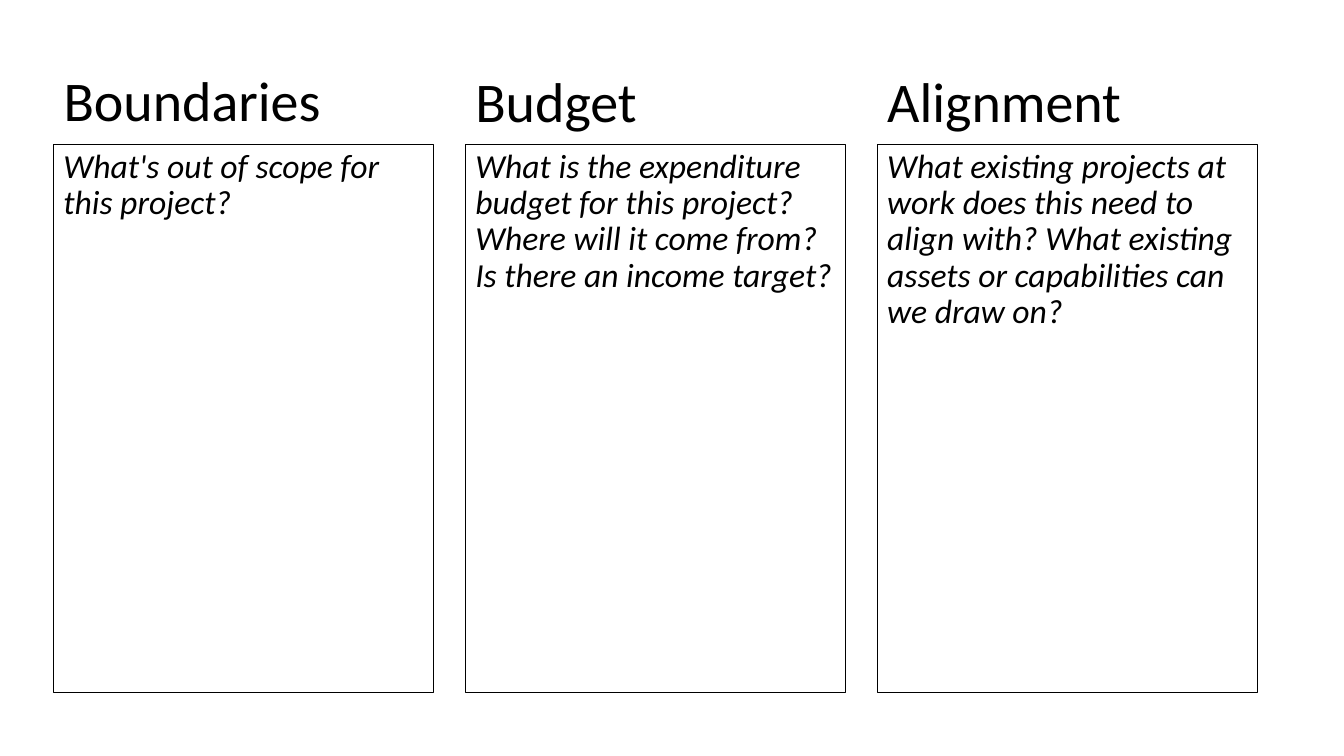
from collections import namedtuple
from dataclasses import dataclass

from pptx import Presentation
from pptx.dml.color import RGBColor
from pptx.enum.shapes import MSO_SHAPE
from pptx.enum.text import MSO_ANCHOR, MSO_AUTO_SIZE, PP_ALIGN
from pptx.util import Pt

Box = namedtuple("Box", "left top width height")


@dataclass(frozen=True)
class Theme:
    font: str = "Calibri"
    ink: RGBColor = RGBColor(0, 0, 0)
    heading_size: float = 40
    prompt_size: float = 24
    border: float = 0.75


THEME = Theme()
COLUMNS_BOX = Box(38.2, 43.4, 859.9, 451.3)
GAP = 22.8
HEADING_HEIGHT = 56
HEADING_GAP = 3.6
COLUMNS = [
    ("Boundaries", "What's out of scope for this project?"),
    ("Budget", "What is the expenditure budget for this project? "
               "Where will it come from? Is there an income target?"),
    ("Alignment", "What existing projects at work does this need to align with? "
                  "What existing assets or capabilities can we draw on?"),
]


def apply_format(target, values):
    for name, value in values.items():
        setattr(target, name, value)


def write_text(shape, text, size, anchor, italic=False, space_before=0):
    frame = shape.text_frame
    apply_format(frame, {
        "word_wrap": True, "auto_size": MSO_AUTO_SIZE.NONE, "vertical_anchor": anchor,
        "margin_left": Pt(7.2), "margin_right": Pt(7.2),
        "margin_top": Pt(3.6), "margin_bottom": Pt(3.6),
    })
    para = frame.paragraphs[0]
    apply_format(para, {"alignment": PP_ALIGN.LEFT, "line_spacing": 0.9,
                        "space_before": Pt(space_before)})
    span = para.add_run()
    span.text = text
    apply_format(span.font, {"name": THEME.font, "size": Pt(size), "italic": italic})
    span.font.color.rgb = THEME.ink


def add_heading(page, box, text, is_title):
    if is_title:
        heading = page.shapes.title
        apply_format(heading, {name: Pt(value) for name, value in box._asdict().items()})
    else:
        heading = page.shapes.add_textbox(*map(Pt, box))
    write_text(heading, text, THEME.heading_size, MSO_ANCHOR.BOTTOM)


def add_prompt(page, box, text):
    panel = page.shapes.add_shape(MSO_SHAPE.RECTANGLE, *map(Pt, box))
    panel.shadow.inherit = False
    panel.fill.background()
    panel.line.color.rgb = THEME.ink
    panel.line.width = Pt(THEME.border)
    write_text(panel, text, THEME.prompt_size, MSO_ANCHOR.TOP, italic=True, space_before=10)


def add_column(page, box, heading, prompt, is_title):
    offset = HEADING_HEIGHT + HEADING_GAP
    add_heading(page, box._replace(height=HEADING_HEIGHT), heading, is_title)
    add_prompt(page, box._replace(top=box.top + offset, height=box.height - offset), prompt)


def add_columns(page, box, columns):
    width = (box.width - GAP * (len(columns) - 1)) / len(columns)
    for index, (heading, prompt) in enumerate(columns):
        column_box = box._replace(left=box.left + index * (width + GAP), width=width)
        add_column(page, column_box, heading, prompt, is_title=index == 0)


def main():
    deck = Presentation()
    apply_format(deck, {"slide_width": Pt(960), "slide_height": Pt(540)})
    page = deck.slides.add_slide(deck.slide_layouts.get_by_name("Title Only"))
    add_columns(page, COLUMNS_BOX, COLUMNS)
    deck.save("out.pptx")


if __name__ == "__main__":
    main()
